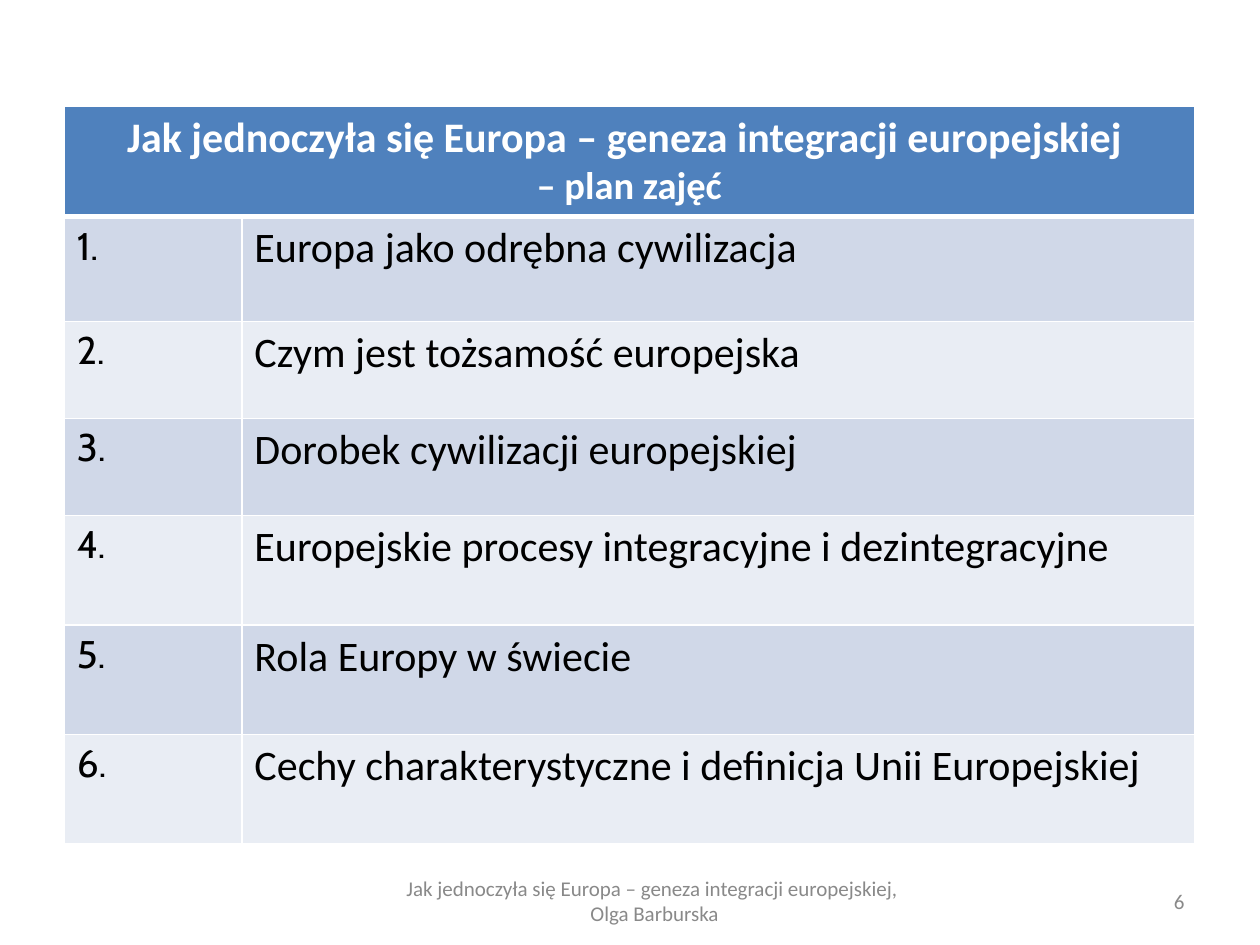
import pptx
import pptx.util
import pptx.dml.color
import pptx.enum.text
import lxml.etree
import pptx.oxml.ns

Inches = pptx.util.Inches
Pt = pptx.util.Pt
RGBColor = pptx.dml.color.RGBColor
ALIGN = pptx.enum.text.PP_ALIGN

WHITE = RGBColor(0xFF, 0xFF, 0xFF)
BLACK = RGBColor(0x00, 0x00, 0x00)
GREY = RGBColor(0x89, 0x89, 0x89)
BLUE = RGBColor(0x4F, 0x81, 0xBD)
BANDS = [RGBColor(0xD0, 0xD8, 0xE8), RGBColor(0xE9, 0xED, 0xF4)]

TOPICS = [
    "Europa jako odrębna cywilizacja",
    "Czym jest tożsamość europejska",
    "Dorobek cywilizacji europejskiej",
    "Europejskie procesy integracyjne i dezintegracyjne",
    "Rola Europy w świecie",
    "Cechy charakterystyczne i definicja Unii Europejskiej",
]
COLUMN_WIDTHS = [1.41, 7.56]
ROW_HEIGHTS = [0.88, 0.83, 0.77, 0.77, 0.87, 0.87, 0.87]


def add_run(para, text, size, color, font="Calibri", bold=False):
    run = para.add_run()
    run.text = text
    run.font.size = Pt(size)
    run.font.name = font
    run.font.bold = bold
    run.font.color.rgb = color


def style_cell(cell, color, top, bottom):
    properties = cell._tc.get_or_add_tcPr()
    for side, width in (("lnL", 1), ("lnR", 1), ("lnT", top), ("lnB", bottom)):
        line = lxml.etree.SubElement(
            properties, pptx.oxml.ns.qn("a:" + side), w=str(Pt(width)))
        fill = lxml.etree.SubElement(line, pptx.oxml.ns.qn("a:solidFill"))
        lxml.etree.SubElement(fill, pptx.oxml.ns.qn("a:srgbClr"), val=str(WHITE))
    cell.fill.solid()
    cell.fill.fore_color.rgb = color


deck = pptx.Presentation()
deck.slide_width = Inches(10)
deck.slide_height = Inches(7.5)
page = deck.slides.add_slide(deck.slide_layouts[6])

table = page.shapes.add_table(
    len(ROW_HEIGHTS), len(COLUMN_WIDTHS), Inches(0.51), Inches(0.84),
    Inches(sum(COLUMN_WIDTHS)), Inches(sum(ROW_HEIGHTS))).table
for column, width in zip(table.columns, COLUMN_WIDTHS):
    column.width = Inches(width)
for row, height in zip(table.rows, ROW_HEIGHTS):
    row.height = Inches(height)

header = table.cell(0, 0)
header.merge(table.cell(0, 1))
for cell in table.rows[0].cells:
    style_cell(cell, BLUE, 1, 3)
para = header.text_frame.paragraphs[0]
para.alignment = ALIGN.CENTER
add_run(para, "Jak jednoczyła się Europa – geneza integracji europejskiej ", 24, WHITE, bold=True)
para.add_line_break()
add_run(para, "– plan zajęć", 22, WHITE, bold=True)

for number, topic in enumerate(TOPICS, start=1):
    number_cell, topic_cell = table.rows[number].cells
    for cell in (number_cell, topic_cell):
        style_cell(cell, BANDS[(number - 1) % 2], 3 if number == 1 else 1, 1)
    add_run(number_cell.text_frame.paragraphs[0], f"{number}.", 22, BLACK, "Cabin")
    add_run(topic_cell.text_frame.paragraphs[0], topic, 24, BLACK)

FOOTERS = [
    (2.87, 4.65, ALIGN.CENTER,
     ["Jak jednoczyła się Europa – geneza integracji europejskiej, ", "Olga Barburska"]),
    (7.17, 2.33, ALIGN.RIGHT, ["6"]),
]
for left, width, alignment, lines in FOOTERS:
    box = page.shapes.add_textbox(Inches(left), Inches(6.95), Inches(width), Inches(0.4))
    frame = box.text_frame
    frame.word_wrap = True
    frame.vertical_anchor = pptx.enum.text.MSO_ANCHOR.MIDDLE
    for index, line in enumerate(lines):
        para = frame.add_paragraph() if index else frame.paragraphs[0]
        para.alignment = alignment
        add_run(para, line, 12, GREY)

deck.save("out.pptx")
